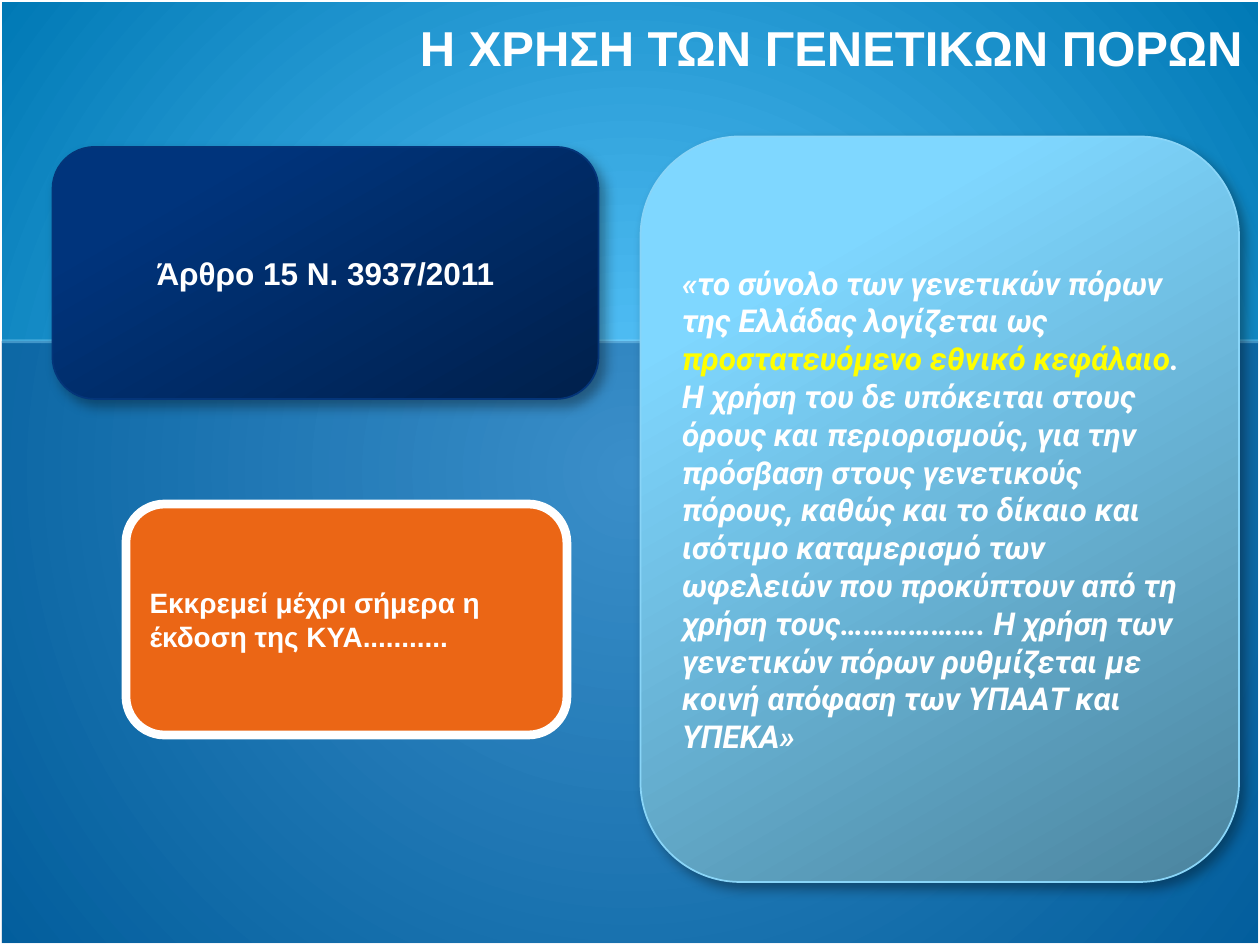
from dataclasses import dataclass
from lxml.etree import SubElement
from pptx import Presentation
from pptx.dml.color import RGBColor
from pptx.enum.shapes import MSO_CONNECTOR, MSO_SHAPE
from pptx.enum.text import MSO_ANCHOR, PP_ALIGN
from pptx.oxml.ns import qn
from pptx.util import Pt


@dataclass(frozen=True)
class Theme:
    """Colours, gradients, fonts and type sizes of the slide."""
    white: str = "FFFFFF"
    yellow: str = "FFFF00"
    orange: str = "EB6615"
    veil: str = "073779"
    edge: str = "8FD9FB"
    navy_line: str = "043579"
    sky_line: str = "89D5F8"
    glow: tuple = ((0, "5DC9FF"), (100, "0079B5"))
    navy: tuple = ((0, "00204C"), (80, "00347C"), (100, "00347D"))
    sky: tuple = ((0, "4B849E"), (80, "7FD7FF"), (100, "81D7FF"))
    sans: str = "Arial"
    quote: str = "Roboto"
    title: int = 28
    body: int = 18
    note: int = 16


THEME = Theme()


def add(node, tag, **attrs):
    """Append a drawing element and return it."""
    return SubElement(node, qn(f"a:{tag}"), {k: str(v) for k, v in attrs.items()})


def fade(node, share):
    """Set the opacity, in percent, of the solid colour under a node."""
    add(next(node.iter(qn("a:srgbClr"))), "alpha", val=share * 1000)


def blend(fill, owner, stops, angle=None):
    """Give a fill a linear gradient, or a round one without an angle."""
    fill.gradient()
    grad = next(owner.iter(qn("a:gradFill")))
    for child in list(grad):
        grad.remove(child)
    group = add(grad, "gsLst")
    for place, color in stops:
        stop = add(group, "gs", pos=place * 1000)
        add(stop, "srgbClr", val=color)
    if angle is None:
        shade = add(grad, "path", path="circle")
        add(shade, "fillToRect", l=50000, t=50000, r=50000, b=50000)
    else:
        add(grad, "lin", ang=angle * 60000, scaled=0)


def cast(shape):
    """Give a shape a soft shadow to the lower right."""
    glow = shape.element.spPr.find(qn("a:effectLst"))
    drop = add(glow, "outerShdw", blurRad=Pt(7), dist=Pt(5), dir=50 * 60000,
               algn="tl", rotWithShape=0)
    add(add(drop, "srgbClr", val="000000"), "alpha", val=35000)


def outline(line, color, width):
    """Set the colour and width of a line."""
    line.color.rgb = RGBColor.from_string(color)
    line.width = Pt(width)


def block(slide, box, kind=MSO_SHAPE.ROUNDED_RECTANGLE):
    """Add a preset shape without a shadow."""
    shape = slide.shapes.add_shape(kind, *map(Pt, box))
    shape.shadow.inherit = False
    return shape


def write(shape, parts, size, font=THEME.sans, align=PP_ALIGN.LEFT, italic=False):
    """Write one bold paragraph of coloured parts, centred in height."""
    frame = shape.text_frame
    frame.word_wrap = True
    frame.vertical_anchor = MSO_ANCHOR.MIDDLE
    para = frame.paragraphs[0]
    para.alignment = align
    for text, color in parts:
        run = para.add_run()
        run.text = text
        run.font.name = font
        run.font.size = Pt(size)
        run.font.bold = True
        run.font.italic = italic
        run.font.color.rgb = RGBColor.from_string(color)


def backdrop(slide, box):
    """Draw the glowing ground, its frame, the lower veil and the horizon."""
    left, top, width, height = box
    blend(slide.background.fill, slide.element, THEME.glow)
    frame = block(slide, box, MSO_SHAPE.RECTANGLE)
    frame.fill.background()
    outline(frame.line, THEME.white, 2)
    level = top + 195
    veil = block(slide, (left + 1, level, width - 2, height - 196),
                 MSO_SHAPE.RECTANGLE)
    veil.fill.solid()
    veil.fill.fore_color.rgb = RGBColor.from_string(THEME.veil)
    fade(veil.element.spPr, 40)
    veil.line.fill.background()
    edge = slide.shapes.add_connector(
        MSO_CONNECTOR.STRAIGHT, Pt(left + 1), Pt(level),
        Pt(left + width - 1), Pt(level))
    outline(edge.line, THEME.edge, 2)
    fade(edge.element.spPr, 40)
    add(edge.element.spPr, "effectLst")


def heading(slide, box):
    """Write the slide title."""
    shape = slide.shapes.add_textbox(*map(Pt, box))
    write(shape, [("Η ΧΡΗΣΗ ΤΩΝ ΓΕΝΕΤΙΚΩΝ ΠΟΡΩΝ", THEME.white)],
          THEME.title, align=PP_ALIGN.CENTER)


def panel(slide, box, stops, color):
    """Add a rounded gradient panel with a shadow."""
    shape = block(slide, box)
    blend(shape.fill, shape.element.spPr, stops, 240)
    outline(shape.line, color, 1)
    cast(shape)
    return shape


def law(slide, box):
    """Add the panel that names the law."""
    shape = panel(slide, box, THEME.navy, THEME.navy_line)
    write(shape, [("Άρθρο 15 Ν. 3937/2011", THEME.white)],
          THEME.body, align=PP_ALIGN.CENTER)


def status(slide, box):
    """Add the orange note on the pending decision."""
    shape = block(slide, box)
    shape.fill.solid()
    shape.fill.fore_color.rgb = RGBColor.from_string(THEME.orange)
    outline(shape.line, THEME.white, 5)
    write(shape, [("Εκκρεμεί μέχρι σήμερα η έκδοση της ΚΥΑ...........",
                   THEME.white)], THEME.note)


def quote(slide, box):
    """Add the panel that quotes the article."""
    shape = panel(slide, box, THEME.sky, THEME.sky_line)
    write(shape, [
        ("«το σύνολο των γενετικών πόρων της Ελλάδας λογίζεται ως ", THEME.white),
        ("προστατευόμενο εθνικό κεφάλαιο", THEME.yellow),
        (". Η χρήση του δε υπόκειται στους όρους και περιορισμούς, για την "
         "πρόσβαση στους γενετικούς πόρους, καθώς και το δίκαιο και ισότιμο "
         "καταμερισμό των ωφελειών που προκύπτουν από τη χρήση "
         "τους………………. Η χρήση των γενετικών πόρων ρυθμίζεται με κοινή "
         "απόφαση των ΥΠΑΑΤ και ΥΠΕΚΑ»", THEME.white),
    ], THEME.body, THEME.quote, italic=True)


def main():
    """Build the slide and save it."""
    deck = Presentation()
    deck.slide_width, deck.slide_height = Pt(720), Pt(540)
    slide = deck.slides.add_slide(deck.slide_layouts[6])
    backdrop(slide, (0, 0, 720, 540))
    heading(slide, (230, 7, 490, 40))
    law(slide, (30, 84, 312, 144))
    status(slide, (72, 288, 252, 132))
    quote(slide, (366, 78, 342, 426))
    deck.save("out.pptx")


if __name__ == "__main__":
    main()
